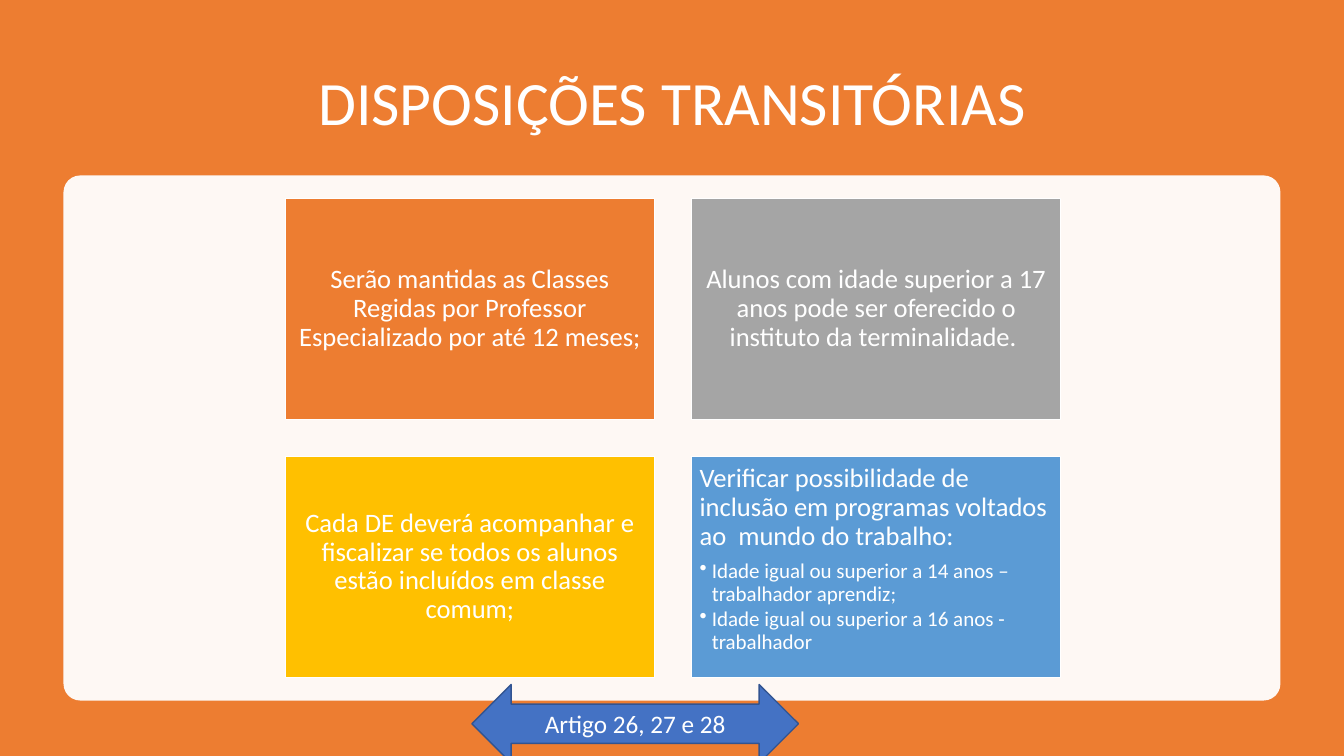
import pptx
import pptx.util
import pptx.dml.color
import pptx.enum.shapes
import pptx.enum.text
import pptx.oxml
import pptx.oxml.ns
import lxml.etree

Inches = pptx.util.Inches
Pt = pptx.util.Pt
Shape = pptx.enum.shapes.MSO_SHAPE
Align = pptx.enum.text.PP_ALIGN
Anchor = pptx.enum.text.MSO_ANCHOR
qn = pptx.oxml.ns.qn

COLORS = {
    "orange": "ED7D31",
    "white": "FFFFFF",
    "gray": "A5A5A5",
    "gold": "FFC000",
    "sky": "5B9BD5",
    "blue": "4472C4",
    "navy": "325491",
}


class SlideBuilder:
    font = "Calibri"

    def __init__(self, slide):
        self.slide = slide

    def color(self, name):
        return pptx.dml.color.RGBColor.from_string(COLORS[name])

    def box(self, preset, left, top, width, height, fill, line=None):
        shape = self.slide.shapes.add_shape(
            preset, Inches(left), Inches(top), Inches(width), Inches(height))
        shape.shadow.inherit = False
        shape.fill.solid()
        shape.fill.fore_color.rgb = self.color(fill)
        if line:
            shape.line.color.rgb = self.color(line)
            shape.line.width = Pt(1)
        else:
            shape.line.fill.background()
        return shape

    def backdrop(self, width, height):
        shape = self.box(Shape.RECTANGLE, 0, 0, width, height, "orange")
        self.slide.shapes.element.insert(2, shape.element)

    def panel(self, left, top, width, height):
        shape = self.box(Shape.ROUNDED_RECTANGLE, left, top, width, height, "white")
        shape.adjustments[0] = 0.032
        tint = shape.element.spPr.find(qn("a:solidFill"))[0]
        lxml.etree.SubElement(tint, qn("a:alpha")).set("val", "95000")

    def add_text(self, paragraph, text, size, align, spacing=None, after=0):
        paragraph.alignment = align
        paragraph.space_after = Pt(after)
        if spacing:
            paragraph.line_spacing = spacing
        run = paragraph.add_run()
        run.text = text
        run.font.name = self.font
        run.font.size = Pt(size)
        run.font.color.rgb = self.color("white")

    def title(self, text, left, top, width, height):
        holder = self.slide.shapes.title
        holder.left, holder.top = Inches(left), Inches(top)
        holder.width, holder.height = Inches(width), Inches(height)
        holder.text_frame.vertical_anchor = Anchor.MIDDLE
        self.add_text(holder.text_frame.paragraphs[0], text, 44, Align.CENTER, 0.9)

    def bullet(self, paragraph):
        properties = paragraph._p.get_or_add_pPr()
        properties.set("marL", str(Inches(0.12)))
        properties.set("indent", str(Inches(-0.12)))
        lxml.etree.SubElement(properties, qn("a:buChar")).set("char", "•")

    def card(self, left, top, width, height, fill, text, items):
        frame = self.box(
            Shape.RECTANGLE, left, top, width, height, fill, "white").text_frame
        frame.word_wrap = True
        frame.margin_left = frame.margin_right = Inches(0.08)
        frame.margin_top = frame.margin_bottom = Inches(0.08)
        frame.vertical_anchor = Anchor.TOP if items else Anchor.MIDDLE
        align = Align.LEFT if items else Align.CENTER
        self.add_text(frame.paragraphs[0], text, 19, align, 0.9, 6.65)
        for item in items:
            paragraph = frame.add_paragraph()
            paragraph.level = 1
            self.add_text(paragraph, item, 15, Align.LEFT, 0.9, 2.25)
            self.bullet(paragraph)

    def arrow(self, left, top, width, height, text):
        frame = self.box(Shape.LEFT_RIGHT_ARROW, left, top, width, height,
                         "blue", "navy").text_frame
        frame.word_wrap = True
        frame.vertical_anchor = Anchor.MIDDLE
        self.add_text(frame.paragraphs[0], text, 18, Align.CENTER)


CARDS = [
    ("orange", "Serão mantidas as Classes Regidas por Professor "
     "Especializado por até 12 meses;", []),
    ("gray", "Alunos com idade superior a 17 anos pode ser oferecido o "
     "instituto da terminalidade. ", []),
    ("gold", "Cada DE deverá acompanhar e fiscalizar se todos os alunos "
     "estão incluídos em classe comum;", []),
    ("sky", "Verificar possibilidade de inclusão em programas voltados "
     "ao  mundo do trabalho:",
     ["Idade igual ou superior a 14 anos – trabalhador aprendiz;",
      "Idade igual ou superior a 16 anos - trabalhador"]),
]


def main():
    deck = pptx.Presentation()
    deck.slide_width, deck.slide_height = Inches(13.33), Inches(7.5)
    builder = SlideBuilder(deck.slides.add_slide(deck.slide_layouts[5]))
    builder.backdrop(13.33, 7.5)
    builder.title("DISPOSIÇÕES TRANSITÓRIAS", 0.92, 0.5, 11.5, 1.1)
    builder.panel(0.63, 1.74, 12.07, 5.21)

    card_width, card_height, gap = 3.66, 2.19, 0.37
    for index, (fill, text, items) in enumerate(CARDS):
        row, column = divmod(index, 2)
        builder.card(2.83 + column * (card_width + gap),
                     1.97 + row * (card_height + gap),
                     card_width, card_height, fill, text, items)

    builder.arrow(4.68, 6.79, 3.24, 0.78, "Artigo 26, 27 e 28")
    deck.save("out.pptx")


if __name__ == "__main__":
    main()
